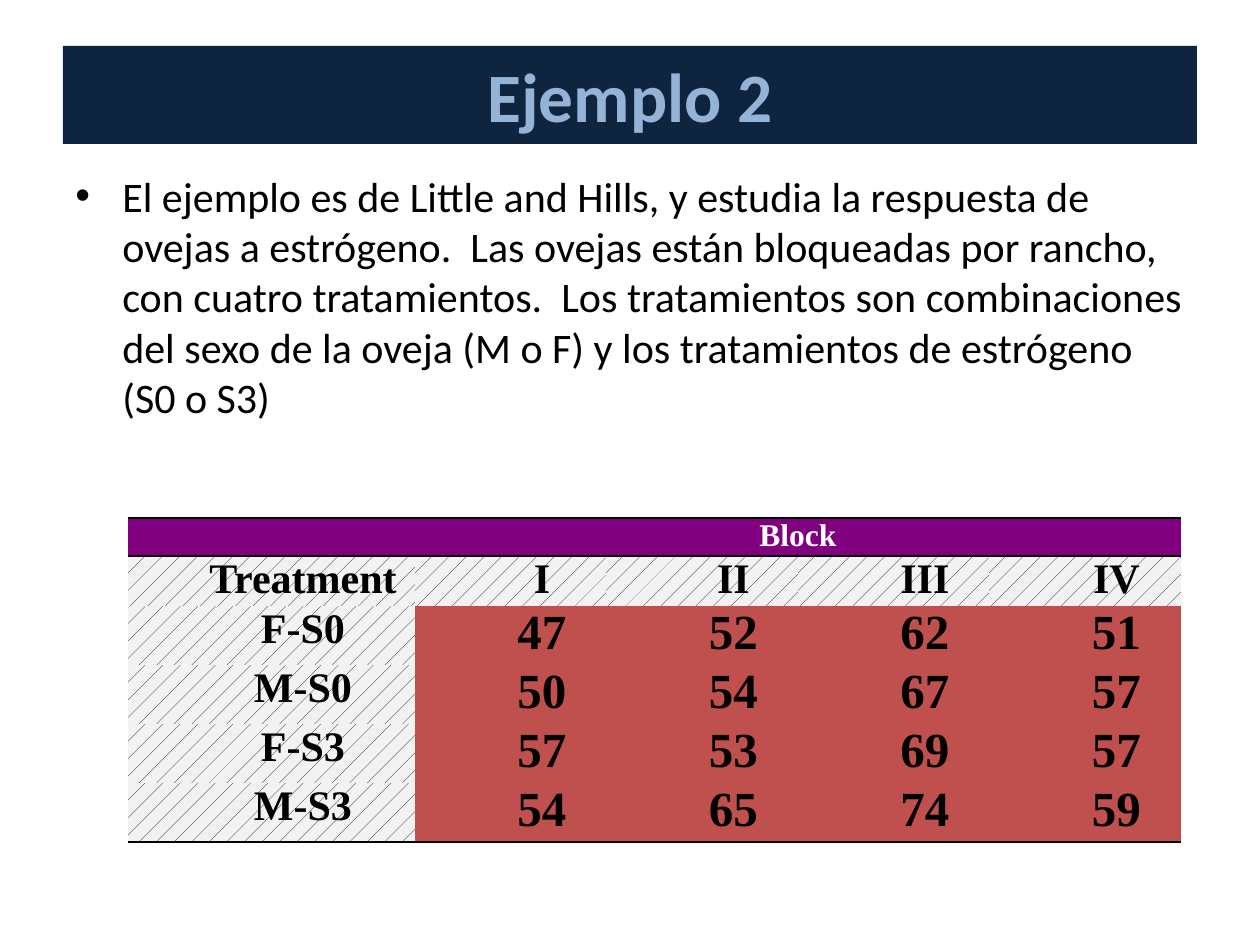
from lxml.etree import SubElement as Sub
from pptx import Presentation
from pptx.dml.color import RGBColor as Color
from pptx.enum.dml import MSO_PATTERN as Pattern
from pptx.enum.shapes import MSO_SHAPE as Shape
from pptx.enum.text import MSO_ANCHOR as Anchor, PP_ALIGN as Align
from pptx.oxml.ns import qn
from pptx.util import Pt

PX = 914400 // 126
SERIF = "Times New Roman"
BLACK, WHITE, PURPLE, RED = "000000", "FFFFFF", "800080", "C0504D"
TITLE = "Ejemplo 2"
BODY = (
    "El ejemplo es de Little and Hills, y estudia la respuesta de ovejas a "
    "estrógeno.  Las ovejas están bloqueadas por rancho, con cuatro "
    "tratamientos.  Los tratamientos son combinaciones del sexo de la oveja "
    "(M o F) y los tratamientos de estrógeno  (S0 o S3)"
)
HEADS = ["Treatment", "I", "II", "III", "IV"]
DATA = [
    ["F-S0", 47, 52, 62, 51],
    ["M-S0", 50, 54, 67, 57],
    ["F-S3", 57, 53, 69, 57],
    ["M-S3", 54, 65, 74, 59],
]
WIDTHS = [287, 191, 192, 191, 192]


def px(*vals):
    """Turn pixel lengths into EMU."""
    return [val * PX for val in vals]


def rgb(hue):
    """Make a colour from a hex string."""
    return Color.from_string(hue)


def add_run(para, text, size, hue, face, bold=True):
    """Add one styled run to a paragraph."""
    run = para.add_run()
    run.text = text
    font = run.font
    font.size, font.name, font.bold = Pt(size), face, bold
    font.color.rgb = rgb(hue)


def add_title(slide):
    """Draw the title band."""
    band = slide.shapes.add_shape(Shape.RECTANGLE, *px(63, 46, 1134, 98))
    band.shadow.inherit = False
    band.fill.solid()
    band.fill.fore_color.rgb = rgb("0F243E")
    band.line.fill.background()
    frame = band.text_frame
    frame.word_wrap = True
    frame.vertical_anchor = Anchor.MIDDLE
    para = frame.paragraphs[0]
    para.alignment = Align.CENTER
    add_run(para, TITLE, 39.6, "95B3D7", "Calibri")


def add_body(slide):
    """Write the bulleted paragraph."""
    frame = slide.shapes.add_textbox(*px(63, 164, 1134, 344)).text_frame
    frame.word_wrap = True
    para = frame.paragraphs[0]
    para.space_before = Pt(5)
    props = para._p.get_or_add_pPr()
    props.set("marL", str(47 * PX))
    props.set("indent", str(-47 * PX))
    Sub(props, qn("a:buFont"), typeface="Arial")
    Sub(props, qn("a:buChar"), char="•")
    add_run(para, BODY, 24, BLACK, "Calibri", False)


def set_edges(cell, top, base):
    """Set the cell borders, where zero means no line."""
    props = cell._tc.get_or_add_tcPr()
    for side, width in zip("LRTB", (0, 0, top, base)):
        line = Sub(props, qn(f"a:ln{side}"), w=str(Pt(width)))
        if width:
            fill = Sub(line, qn("a:solidFill"))
            Sub(fill, qn("a:srgbClr"), val=BLACK)
        else:
            Sub(line, qn("a:noFill"))


def set_fill(cell, hue):
    """Fill a cell with a colour, or with dots when there is none."""
    if hue:
        cell.fill.solid()
        cell.fill.fore_color.rgb = rgb(hue)
    else:
        cell.fill.patterned()
        cell.fill.pattern = Pattern.PERCENT_5
        cell.fill.fore_color.rgb = rgb(BLACK)
        cell.fill.back_color.rgb = rgb("F2F2F2")


def set_text(cell, text, size, hue, indent, before, after):
    """Write centred bold text into a cell."""
    cell.margin_left = cell.margin_right = 9 * PX
    cell.margin_top = cell.margin_bottom = 0
    para = cell.text_frame.paragraphs[0]
    para.alignment = Align.CENTER
    para.space_before, para.space_after = Pt(before), Pt(after)
    para._p.get_or_add_pPr().set("indent", str(indent * PX))
    add_run(para, text, size, hue, SERIF)


def add_grid(slide):
    """Build the table of treatments by block."""
    rows = [["", "Block", "", "", ""], HEADS, *DATA]
    last = len(rows) - 1
    box = px(128, 518, sum(WIDTHS), 324)
    frame = slide.shapes.add_table(len(rows), len(WIDTHS), *box)
    grid = frame.table
    grid.first_row = grid.horz_banding = False
    for col, width in zip(grid.columns, WIDTHS):
        col.width = width * PX
    for row in grid.rows:
        row.height = 0
    frame.height = box[3]
    grid.cell(0, 1).merge(grid.cell(0, 4))
    for r, row in enumerate(rows):
        top, base = {0: (1.5, 1), 1: (1, 0), last: (0, 1.5)}.get(r, (0, 0))
        for c, text in enumerate(row):
            cell = grid.cell(r, c)
            set_edges(cell, top, base)
            if r == 0:
                set_fill(cell, PURPLE)
                set_text(cell, text, 18, WHITE, 0, 6, 0)
                continue
            gap = 3 if r == 1 else 0
            value = r > 1 and c > 0
            set_fill(cell, RED if value else None)
            size = 28 if value else 24
            set_text(cell, str(text), size, BLACK, 63, gap, gap)


def main():
    """Build and save the slide."""
    deck = Presentation()
    deck.slide_width, deck.slide_height = px(1260, 945)
    slide = deck.slides.add_slide(deck.slide_layouts[6])
    add_title(slide)
    add_body(slide)
    add_grid(slide)
    deck.save("out.pptx")


if __name__ == "__main__":
    main()
